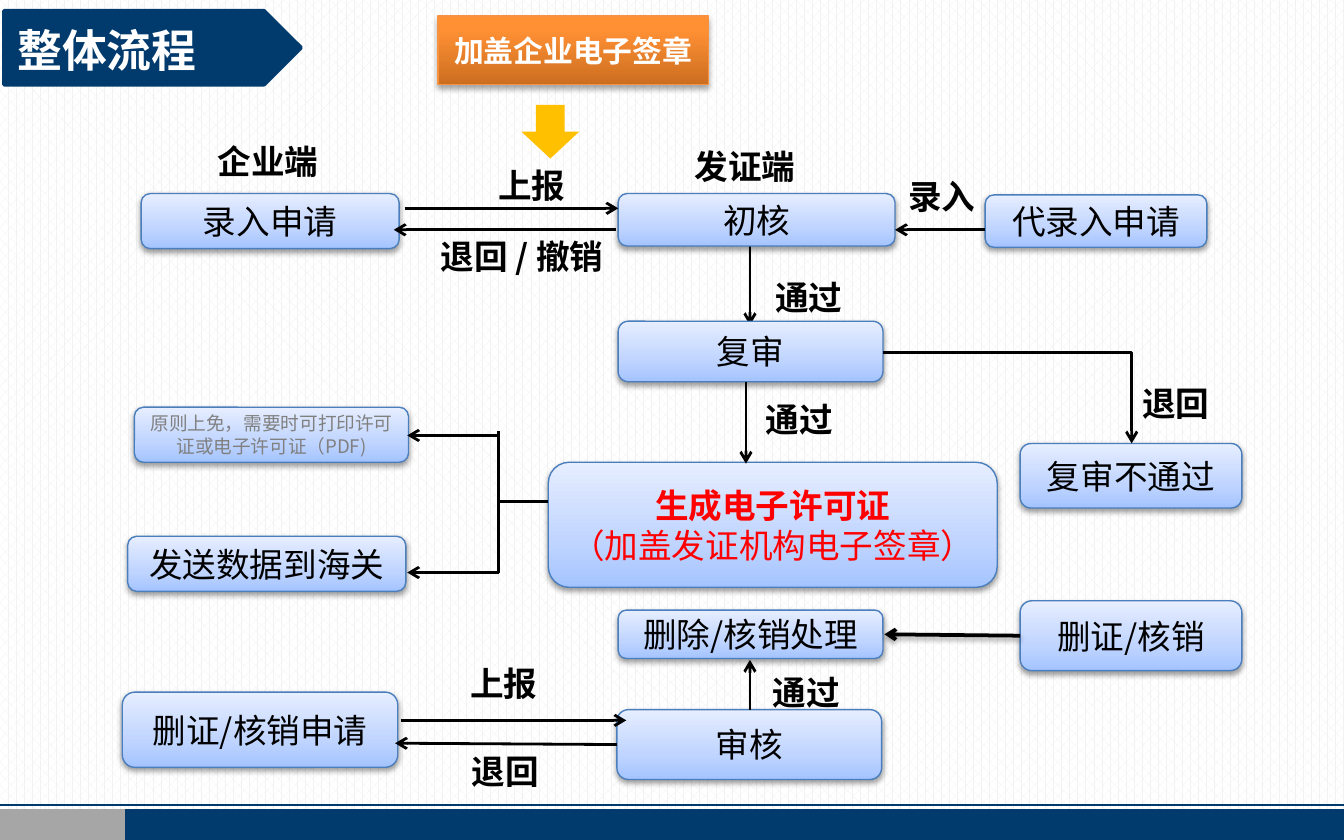
from lxml.etree import SubElement
from pptx import Presentation
from pptx.dml.color import RGBColor
from pptx.enum.dml import MSO_PATTERN
from pptx.enum.shapes import MSO_CONNECTOR, MSO_SHAPE
from pptx.enum.text import MSO_ANCHOR, PP_ALIGN
from pptx.oxml.ns import qn
from pptx.util import Inches, Pt

FONT = "Noto Sans CJK SC"
COLORS = {
    "navy": "013B6D", "gray": "A6A6A6", "black": "000000", "white": "FFFFFF",
    "dots": "F2F2F2", "red": "FF0000", "muted": "808080", "gold": "FFC000",
    "box_edge": "4B7EBC", "stamp_edge": "F69240",
    "blue_low": "A4C4FF", "blue_mid": "BFD4FF", "blue_high": "E6EEFF",
    "orange_low": "CC6E20", "orange_mid": "FF9034", "orange_high": "FF9136",
}
BLUE = [(0, "blue_low"), (35, "blue_mid"), (100, "blue_high")]
ORANGE = [(0, "orange_low"), (80, "orange_mid"), (100, "orange_high")]


def rgb(name):
    return RGBColor.from_string(COLORS[name])


class FlowSlide:
    def __init__(self, deck):
        self.page = deck.slides.add_slide(deck.slide_layouts[6])
        fill = self.page.background.fill
        fill.patterned()
        fill.pattern = MSO_PATTERN.PERCENT_60
        fill.fore_color.rgb = rgb("dots")
        fill.back_color.rgb = rgb("white")

    def set_text(self, frame, lines, size, color, bold=False, align=PP_ALIGN.LEFT):
        """Fill a frame; bold may be one flag or one flag per line."""
        frame.word_wrap = True
        flags = bold if isinstance(bold, list) else [bold] * len(lines)
        for index, (line, flag) in enumerate(zip(lines, flags)):
            para = frame.paragraphs[0] if index == 0 else frame.add_paragraph()
            para.text = line
            para.alignment = align
            font = para.font
            font.name, font.size, font.bold = FONT, Pt(size), flag
            font.color.rgb = rgb(color)
            props = para._p.pPr.find(qn("a:defRPr"))
            SubElement(props, qn("a:ea"), typeface=FONT)

    def shape(self, kind, place, fill, edge=None, width=0.75):
        shape = self.page.shapes.add_shape(kind, *map(Inches, place))
        shape.shadow.inherit = False
        shape.fill.solid()
        shape.fill.fore_color.rgb = rgb(fill)
        if edge:
            shape.line.color.rgb = rgb(edge)
            shape.line.width = Pt(width)
        else:
            shape.line.fill.background()
        return shape

    def shade(self, shape, stops):
        """Apply a bottom-to-top gradient with any number of stops."""
        shape.fill.gradient()
        shape.fill.gradient_angle = 90
        stop_list = shape._element.spPr.find(qn("a:gradFill")).find(qn("a:gsLst"))
        stop_list.clear()
        for position, name in stops:
            stop = SubElement(stop_list, qn("a:gs"), pos=str(position * 1000))
            SubElement(stop, qn("a:srgbClr"), val=COLORS[name])

    def drop_shadow(self, effects, alpha=38, distance=1.6):
        shadow = SubElement(effects, qn("a:outerShdw"), blurRad=str(Pt(3.1)),
                            dist=str(Pt(distance)), dir="5400000", rotWithShape="0")
        color = SubElement(shadow, qn("a:srgbClr"), val=COLORS["black"])
        SubElement(color, qn("a:alpha"), val=str(alpha * 1000))

    def box(self, place, lines, size=18, color="black", bold=False):
        shape = self.shape(MSO_SHAPE.ROUNDED_RECTANGLE, place, "blue_mid", "box_edge")
        self.shade(shape, BLUE)
        self.drop_shadow(shape._element.spPr.find(qn("a:effectLst")))
        shape.text_frame.vertical_anchor = MSO_ANCHOR.MIDDLE
        self.set_text(shape.text_frame, lines, size, color, bold, PP_ALIGN.CENTER)

    def stamp(self, place, text):
        shape = self.shape(MSO_SHAPE.RECTANGLE, place, "orange_mid", "stamp_edge")
        self.shade(shape, ORANGE)
        self.drop_shadow(shape._element.spPr.find(qn("a:effectLst")), 35, 1.8)
        shape.text_frame.vertical_anchor = MSO_ANCHOR.MIDDLE
        self.set_text(shape.text_frame, [text], 16, "white", True, PP_ALIGN.CENTER)

    def label(self, left, top, width, text, size=18, color="black", height=0.4):
        box = self.page.shapes.add_textbox(*map(Inches, (left, top, width, height)))
        self.set_text(box.text_frame, [text], size, color, True)

    def line(self, ends, arrow=True, color="black", width=1.5, bent=False, shadow=False):
        kind = MSO_CONNECTOR.ELBOW if bent else MSO_CONNECTOR.STRAIGHT
        link = self.page.shapes.add_connector(kind, *map(Inches, ends))
        link.line.color.rgb = rgb(color)
        link.line.width = Pt(width)
        props = link._element.spPr
        if bent:
            props.find(qn("a:prstGeom")).set("prst", "bentConnector2")
        if arrow:
            SubElement(props.find(qn("a:ln")), qn("a:tailEnd"), type="arrow")
        effects = SubElement(props, qn("a:effectLst"))
        if shadow:
            self.drop_shadow(effects)


def main():
    deck = Presentation()
    deck.slide_width, deck.slide_height = Inches(10), Inches(6.25)
    flow = FlowSlide(deck)

    # Footer and title
    flow.shape(MSO_SHAPE.RECTANGLE, (0.93, 6.02, 9.07, 0.23), "navy")
    flow.shape(MSO_SHAPE.RECTANGLE, (0, 6.02, 0.93, 0.23), "gray")
    flow.line((10, 5.99, 0, 5.99), arrow=False, color="navy", width=1)
    flow.shape(MSO_SHAPE.PENTAGON, (0.03, 0.08, 2.21, 0.55), "navy", "navy", 2)
    flow.label(0.03, 0.12, 2.08, "整体流程", 24, "white", 0.5)

    # The first arrow tip lies under the review box
    flow.line((5.58, 1.81, 5.58, 2.42))

    # Steps
    for place, text in [
        ((1.05, 1.44, 1.92, 0.41), "录入申请"),
        ((4.6, 1.44, 2.06, 0.39), "初核"),
        ((7.33, 1.45, 1.65, 0.39), "代录入申请"),
        ((4.6, 2.39, 1.97, 0.45), "复审"),
        ((7.59, 3.3, 1.65, 0.48), "复审不通过"),
        ((0.95, 3.99, 2.07, 0.41), "发送数据到海关"),
        ((4.6, 4.54, 1.97, 0.36), "删除/核销处理"),
        ((7.59, 4.47, 1.65, 0.52), "删证/核销"),
        ((0.91, 5.15, 2.05, 0.56), "删证/核销申请"),
        ((4.59, 5.28, 1.97, 0.52), "审核"),
    ]:
        flow.box(place, [text])
    flow.box((4.08, 3.44, 3.34, 0.93), ["生成电子许可证", "（加盖发证机构电子签章）"],
             color="red", bold=[True, False])
    flow.box((1, 3.03, 2.04, 0.41), ["原则上免，需要时可打印许可证或电子许可证（PDF)"],
             size=10, color="muted")
    flow.stamp((3.26, 0.12, 2.01, 0.51), "加盖企业电子签章")
    flow.shape(MSO_SHAPE.DOWN_ARROW, (3.88, 0.78, 0.43, 0.4), "gold")

    # Links between steps
    for ends in [
        (3.01, 1.55, 4.6, 1.55), (4.58, 1.71, 2.93, 1.71),
        (7.33, 1.71, 6.66, 1.71), (5.55, 2.84, 5.55, 3.45),
        (3.71, 3.24, 3.03, 3.24), (3.71, 4.26, 3.03, 4.26),
        (5.58, 5.28, 5.58, 4.91),
        (2.98, 5.36, 4.66, 5.36), (4.59, 5.54, 2.94, 5.53),
    ]:
        flow.line(ends)
    flow.line((4.08, 3.73, 3.71, 3.73), arrow=False)
    flow.line((3.71, 3.21, 3.71, 4.26), arrow=False)
    flow.line((6.57, 2.62, 8.42, 3.3), bent=True)
    flow.line((7.59, 4.73, 6.58, 4.72), width=2, shadow=True)

    # Labels
    for left, top, width, text in [
        (1.52, 1, 0.96, "企业端"), (5.07, 1.04, 0.96, "发证端"),
        (3.61, 1.18, 0.71, "上报"), (3.18, 1.71, 1.48, "退回 / 撤销"),
        (6.66, 1.26, 0.71, "录入"), (5.67, 2.01, 0.71, "通过"),
        (5.6, 2.92, 0.71, "通过"), (8.4, 2.8, 0.71, "退回"),
        (3.4, 4.88, 0.71, "上报"), (5.65, 4.95, 0.71, "通过"),
        (3.41, 5.54, 0.71, "退回"),
    ]:
        flow.label(left, top, width, text)

    deck.save("out.pptx")


if __name__ == "__main__":
    main()
